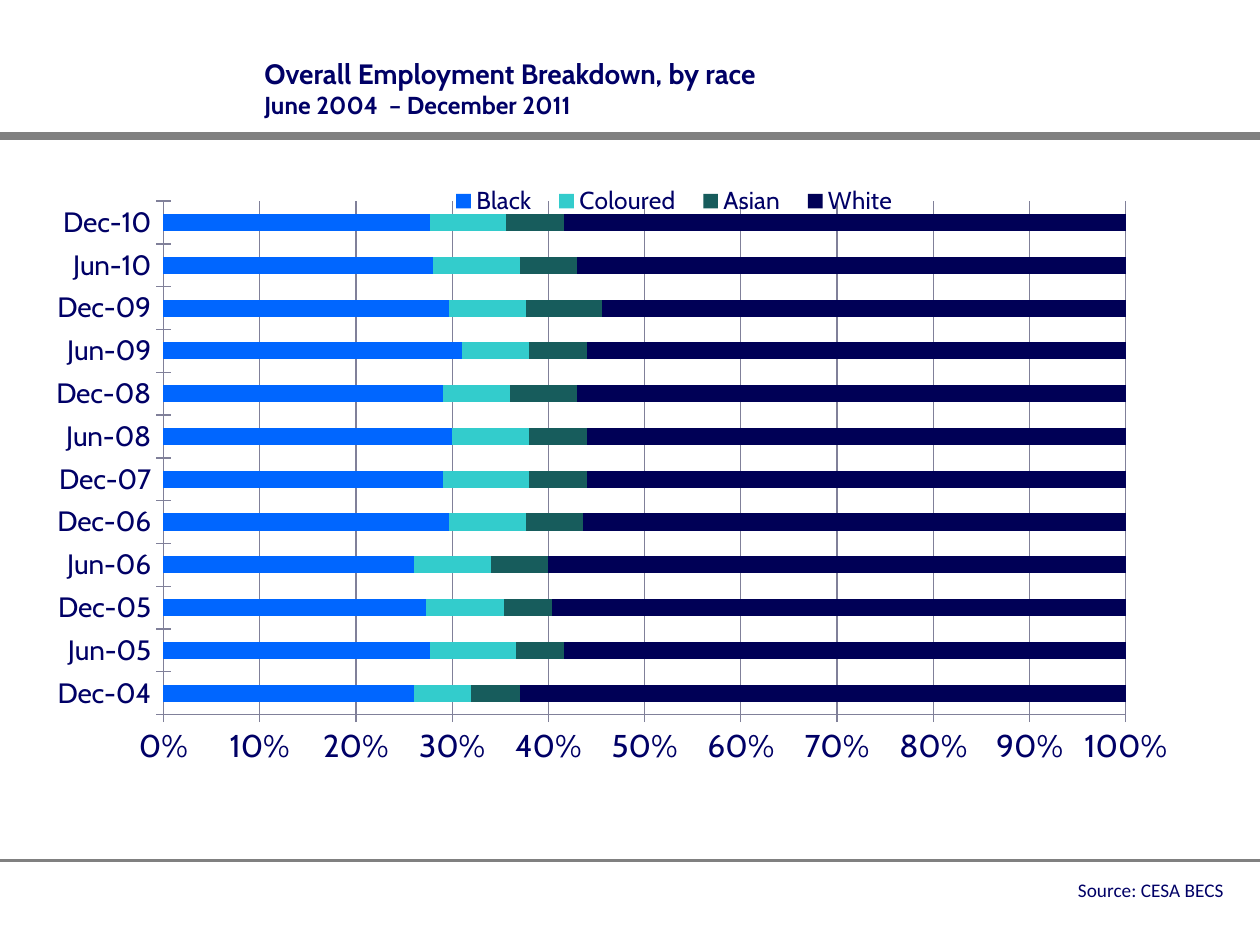
from lxml import etree
from pptx import Presentation
from pptx.chart.data import CategoryChartData
from pptx.dml.color import RGBColor
from pptx.enum.chart import XL_CHART_TYPE, XL_LEGEND_POSITION, XL_TICK_LABEL_POSITION, XL_TICK_MARK
from pptx.enum.shapes import MSO_CONNECTOR
from pptx.enum.text import MSO_ANCHOR, MSO_AUTO_SIZE, PP_ALIGN
from pptx.oxml.ns import qn
from pptx.util import Inches, Pt

BAR_STACKED_100 = XL_CHART_TYPE.BAR_STACKED_100
LEGEND_TOP = XL_LEGEND_POSITION.TOP
LABELS_LOW = XL_TICK_LABEL_POSITION.LOW
CROSS = XL_TICK_MARK.CROSS
NO_TICK = XL_TICK_MARK.NONE

WIDTH, HEIGHT = 10, 7.5
COLORS = {"text": "000066", "rule": "808080", "axis": "808099",
          "Black": "0066FF", "Coloured": "33CCCC", "Asian": "175C5C", "White": "000056"}

HEADING = [("Overall Employment Breakdown, by race", 16), ("June 2004  – December 2011", 14)]
SOURCE = [("Source: CESA BECS", 11)]
RULES = [(1.08, 5), (6.83, 2)]  # height on the slide, weight
MONTHS = ["Dec-04", "Jun-05", "Dec-05", "Jun-06", "Dec-06", "Dec-07",
          "Jun-08", "Dec-08", "Jun-09", "Dec-09", "Jun-10", "Dec-10"]
SHARES = {
    "Black": [26, 28, 27, 26, 30, 29, 30, 29, 31, 30, 28, 28],
    "Coloured": [6, 9, 8, 8, 8, 9, 8, 7, 7, 8, 9, 8],
    "Asian": [5, 5, 5, 6, 6, 6, 6, 7, 6, 8, 6, 6],
    "White": [63, 59, 59, 60, 57, 56, 56, 57, 56, 55, 57, 59],
}


def color(name):
    return RGBColor.from_string(COLORS[name])


def style_font(font, size, family="Cabin", bold=False):
    font.name, font.size, font.bold = family, Pt(size), bold
    font.color.rgb = color("text")


def add_rule(slide, y, weight):
    rule = slide.shapes.add_connector(MSO_CONNECTOR.STRAIGHT, 0, Inches(y), Inches(WIDTH), Inches(y))
    rule.line.color.rgb = color("rule")
    rule.line.width = Pt(weight)
    etree.SubElement(rule._element.spPr, qn("a:effectLst"))


def add_text(slide, box, lines, family, bold=False):
    """Add one paragraph whose lines are parted by line breaks."""
    frame = slide.shapes.add_textbox(*map(Inches, box)).text_frame
    paragraph = frame.paragraphs[0]
    for index, (words, size) in enumerate(lines):
        if index:
            paragraph.add_line_break()
        run = paragraph.add_run()
        run.text = words
        style_font(run.font, size, family, bold)
    return frame


def place_manually(parent, index, box, inner=False):
    """Fix a chart part at shares (x, y, w, h) of the chart's size."""
    for old in parent.findall(qn("c:layout")):
        parent.remove(old)
    layout = etree.Element(qn("c:layout"))
    manual = etree.SubElement(layout, qn("c:manualLayout"))
    settings = [("layoutTarget", "inner")] if inner else []
    settings += [("xMode", "edge"), ("yMode", "edge"), *zip("xywh", box)]
    for tag, value in settings:
        etree.SubElement(manual, qn(f"c:{tag}")).set("val", str(value))
    parent.insert(index, layout)


def add_breakdown(slide):
    data = CategoryChartData(number_format="0")
    data.categories = MONTHS
    for race, shares in SHARES.items():
        data.add_series(race, shares)
    box = map(Inches, (0.26, 1.39, 9.43, 5.16))
    chart = slide.shapes.add_chart(BAR_STACKED_100, *box, data).chart
    style_font(chart.font, 18)
    chart.has_title = False

    plot = chart.plots[0]
    plot.gap_width, plot.overlap, plot.vary_by_categories = 150, 100, False
    for series in plot.series:
        series.format.fill.solid()
        series.format.fill.fore_color.rgb = color(series.name)

    months, percent = chart.category_axis, chart.value_axis
    for axis, size in ((months, 16), (percent, 18)):
        style_font(axis.tick_labels.font, size)
        axis.major_tick_mark, axis.minor_tick_mark = CROSS, NO_TICK
        axis.format.line.color.rgb = color("axis")
    months.tick_label_position = LABELS_LOW
    months.has_major_gridlines = False
    percent.minimum_scale, percent.maximum_scale, percent.major_unit = 0, 1, 0.1
    percent.tick_labels.number_format = "0%"
    percent.tick_labels.number_format_is_linked = False
    percent.has_major_gridlines = True
    percent.major_gridlines.format.line.color.rgb = color("axis")

    chart.has_legend = True
    legend = chart.legend
    legend.position = LEGEND_TOP
    legend.include_in_layout = False
    style_font(legend.font, 14)
    place_manually(legend._element, 1, (0.34, 0.01, 0.4, 0.06))
    plot_area = chart._chartSpace.chart.plotArea
    place_manually(plot_area, 0, (0.11, 0.04, 0.81, 0.79), inner=True)


def main():
    deck = Presentation()
    deck.slide_width, deck.slide_height = Inches(WIDTH), Inches(HEIGHT)
    slide = deck.slides.add_slide(deck.slide_layouts[6])
    for y, weight in RULES:
        add_rule(slide, y, weight)
    add_breakdown(slide)

    heading = add_text(slide, (2, 0.25, 7.25, 0.75), HEADING, "Cabin", bold=True)
    heading.word_wrap = True
    heading.vertical_anchor = MSO_ANCHOR.BOTTOM

    source = add_text(slide, (8.44, 6.92, 1.37, 0.29), SOURCE, "Calibri")
    source.word_wrap = False
    source.auto_size = MSO_AUTO_SIZE.SHAPE_TO_FIT_TEXT
    source.paragraphs[0].alignment = PP_ALIGN.RIGHT
    deck.save("out.pptx")


if __name__ == "__main__":
    main()
